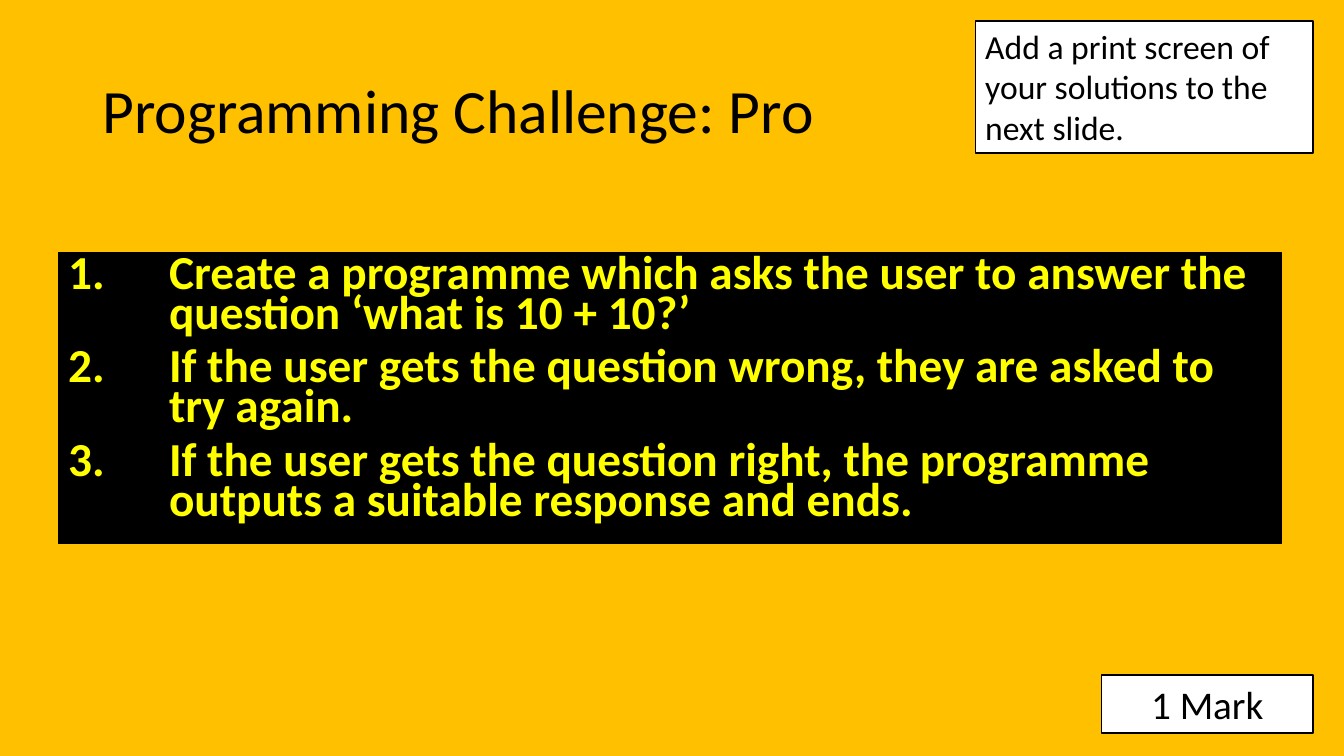
import pptx
import pptx.dml.color
import pptx.enum.shapes
import pptx.enum.text
import pptx.util
from pptx.util import Cm
import lxml.etree

ALIGN = pptx.enum.text.PP_ALIGN
ANCHOR = pptx.enum.text.MSO_ANCHOR


def paint(color_format, value):
    color_format.rgb = pptx.dml.color.RGBColor.from_string(value)


def style(para, size, color, bold=False):
    para.font.name = "Calibri"
    para.font.size = pptx.util.Pt(size)
    para.font.bold = bold
    paint(para.font.color, color)


deck = pptx.Presentation()
deck.slide_width, deck.slide_height = Cm(33.87), Cm(19.05)
page = deck.slides.add_slide(deck.slide_layouts[6])
page.background.fill.solid()
paint(page.background.fill.fore_color, "FFC000")

# Title
title = page.shapes.add_textbox(Cm(2.33), Cm(1.01), Cm(29.21), Cm(3.68))
title.text_frame.word_wrap = True
title.text_frame.vertical_anchor = ANCHOR.MIDDLE
para = title.text_frame.paragraphs[0]
para.text = "Programming Challenge: Pro"
para.line_spacing = 0.9
style(para, 44, "000000")

# Panels: left, top, width, height, fill
panels = [
    (24.58, 0.53, 8.51, 3.33, "FFFFFF"),
    (27.76, 17.01, 5.33, 1.46, "FFFFFF"),
    (1.47, 6.37, 30.82, 7.33, "000000"),
]
boxes = []
for left, top, width, height, fill in panels:
    box = page.shapes.add_shape(
        pptx.enum.shapes.MSO_SHAPE.RECTANGLE, Cm(left), Cm(top), Cm(width), Cm(height))
    box.shadow.inherit = False
    box.fill.solid()
    paint(box.fill.fore_color, fill)
    paint(box.line.color, "000000")
    box.line.width = pptx.util.Pt(1)
    box.text_frame.word_wrap = True
    box.text_frame.vertical_anchor = ANCHOR.TOP
    boxes.append(box)
reminder, mark, challenge = boxes

# Reminder and mark labels
labels = [
    (reminder, "Add a print screen of your solutions to the next slide.", 24, ALIGN.LEFT),
    (mark, "1 Mark", 28, ALIGN.CENTER),
]
for box, words, size, align in labels:
    para = box.text_frame.paragraphs[0]
    para.text = words
    para.alignment = align
    style(para, size, "000000")

# Numbered tasks
tasks = [
    "Create a programme which asks the user to answer the question ‘what is 10 + 10?’",
    "If the user gets the question wrong, they are asked to try again.",
    "If the user gets the question right, the programme outputs a suitable response and ends.",
]
frame = challenge.text_frame
for number, task in enumerate(tasks):
    para = frame.add_paragraph() if number else frame.paragraphs[0]
    para.text = task
    para.alignment = ALIGN.LEFT
    para.line_spacing = 0.7
    if number:
        para.space_before = pptx.util.Pt(10)
    properties = para._p.get_or_add_pPr()
    properties.set("marL", str(Cm(2.54)))
    properties.set("indent", str(-Cm(2.54)))
    numbering = lxml.etree.SubElement(properties, pptx.oxml.ns.qn("a:buAutoNum"))
    numbering.set("type", "arabicPeriod")
    style(para, 33.8, "FFFF00", bold=True)

deck.save("out.pptx")
